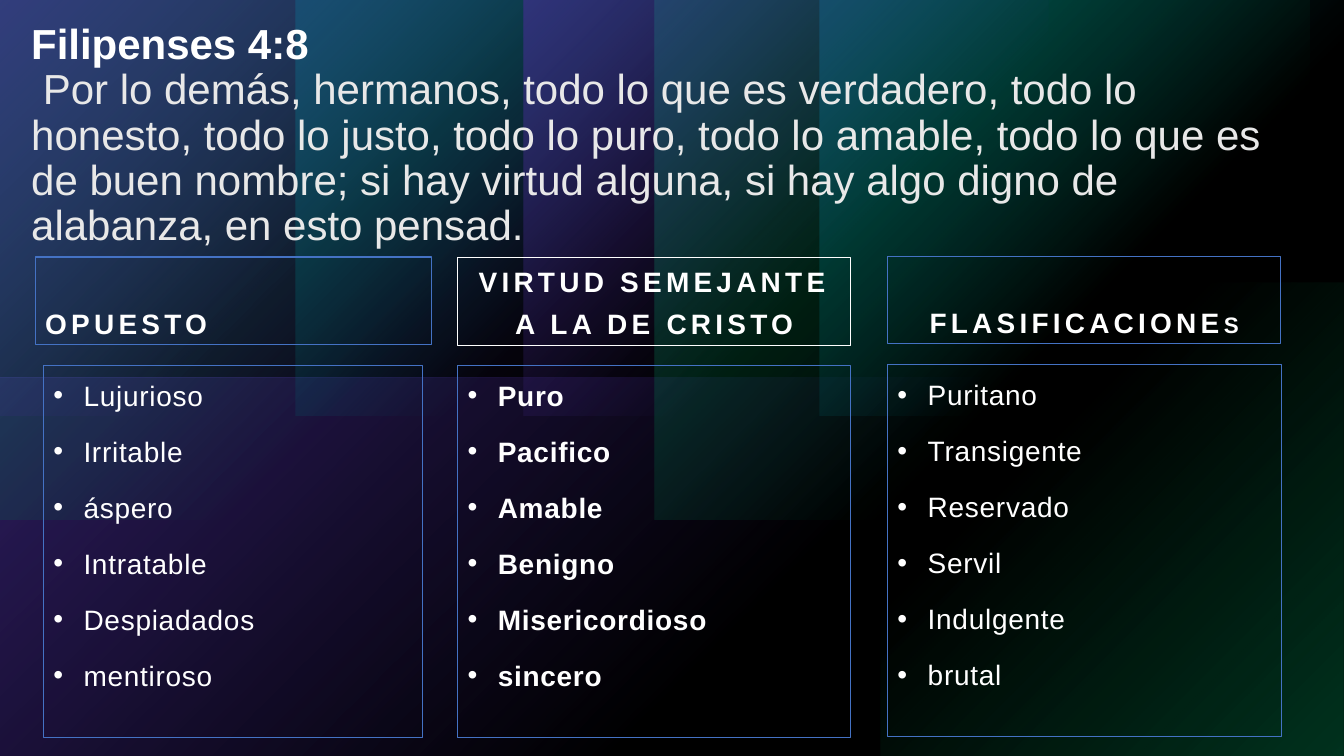
from copy import deepcopy
from lxml.etree import SubElement
from pptx import Presentation
from pptx.dml.color import RGBColor
from pptx.enum.shapes import MSO_SHAPE as Preset
from pptx.enum.text import MSO_ANCHOR as Anchor, MSO_AUTO_SIZE as AutoSize, PP_ALIGN as Align
from pptx.oxml import parse_xml
from pptx.oxml.ns import nsdecls, qn
from pptx.util import Pt

COLORS = {
    "black": "000000", "white": "FFFFFF", "verse": "E8E8E8", "blue": "4472C4",
    "green": "00D17D", "purple": "794DFF", "cyan": "00BAC8",
}
FONT = "Arial"
SLIDE_SIZE = (960, 540)

REFERENCE = "Filipenses 4:8"
VERSE = (" Por lo demás, hermanos, todo lo que es verdadero, todo lo honesto, todo lo justo, "
         "todo lo puro, todo lo amable, todo lo que es de buen nombre; si hay virtud alguna, "
         "si hay algo digno de alabanza, en esto pensad.")
TITLE_BOX = (15.1, 13, 899.3, 141.8)

COLUMNS = [
    {"heading": ["OPUESTO"], "heading_box": (25.2, 183.6, 283.2, 62.6), "align": Align.LEFT,
     "outline": ("blue", 1), "list_box": (31, 260.8, 270.7, 265.7), "bold": False,
     "items": ["Lujurioso", "Irritable", "áspero", "Intratable", "Despiadados", "mentiroso"]},
    {"heading": ["VIRTUD SEMEJANTE A LA DE CRISTO"], "heading_box": (326.9, 183.9, 280.8, 62.6),
     "align": Align.CENTER, "outline": ("white", 0.75),
     "list_box": (326.9, 260.8, 280.8, 265.7), "bold": True,
     "items": ["Puro", "Pacifico", "Amable", "Benigno", "Misericordioso", "sincero"]},
    {"heading": ["FLASIFICACIONE", "S"], "heading_box": (634, 183.1, 280.8, 62.6),
     "align": Align.CENTER, "outline": ("blue", 0.75),
     "list_box": (634, 260.4, 281.2, 265.7), "bold": False,
     "items": ["Puritano", "Transigente", "Reservado", "Servil", "Indulgente", "brutal"]},
]

TOP_LEFT = (0, 0, 100, 100)
BOTTOM_RIGHT = (100, 100, 0, 0)
CORNER_GLOW = [(0, 40), (34, 20), (65, 0)]
WIDE_GLOW = [(0, 60), (63, 0)]
GLOW = [(0, 60), (60, 0)]
GLOWS = [
    ((629.3, 201.6, 330.7, 338.4), "green", CORNER_GLOW, BOTTOM_RIGHT),
    ((0, 0, 901.4, 270), "purple", GLOW, TOP_LEFT),
    ((0, 270, 901.4, 270), "purple", GLOW, TOP_LEFT),
    ((0, 0, 468, 370.8), "green", WIDE_GLOW, TOP_LEFT),
    ((467.6, 0, 468, 370.8), "green", WIDE_GLOW, TOP_LEFT),
    ((585.4, 0, 374.4, 296.6), "cyan", GLOW, TOP_LEFT),
    ((211, 0, 374.4, 296.6), "cyan", GLOW, TOP_LEFT),
    ((374.4, 0, 374.4, 296.6), "purple", GLOW, TOP_LEFT),
    ((0, 0, 374.4, 296.6), "purple", GLOW, TOP_LEFT),
]
VEIL_OPACITY = 40


def color(name):
    return RGBColor.from_string(COLORS[name])


def add_rectangle(slide, box):
    shape = slide.shapes.add_shape(Preset.RECTANGLE, *map(Pt, box))
    shape.shadow.inherit = False
    shape.line.fill.background()
    return shape


def add_glow(slide, box, name, stops, focus):
    shape = add_rectangle(slide, box)
    stop_xml = "".join(
        f'<a:gs pos="{position * 1000}"><a:srgbClr val="{COLORS[name]}">'
        f'<a:alpha val="{opacity * 1000}"/></a:srgbClr></a:gs>' for position, opacity in stops)
    sides = " ".join(f'{side}="{value * 1000}"' for side, value in zip("ltrb", focus))
    gradient = parse_xml(
        f'<a:gradFill {nsdecls("a")} rotWithShape="1"><a:gsLst>{stop_xml}</a:gsLst>'
        f'<a:path path="circle"><a:fillToRect {sides}/></a:path></a:gradFill>')
    shape._element.spPr.find(qn("a:prstGeom")).addnext(gradient)


def add_veil(slide):
    shape = add_rectangle(slide, (0, 0, *SLIDE_SIZE))
    shape.fill.solid()
    shape.fill.fore_color.rgb = color("black")
    fill_color = shape._element.spPr.find(qn("a:solidFill"))[0]
    SubElement(fill_color, qn("a:alpha"), val=str(VEIL_OPACITY * 1000))


def format_run(run, size, bold, name="white", spacing=0):
    run.font.name = FONT
    run.font.size = Pt(size)
    run.font.bold = bold
    run.font.color.rgb = color(name)
    if spacing:
        run._r.get_or_add_rPr().set("spc", str(int(spacing * 100)))


def place_title(slide):
    title = slide.shapes.title
    slide.shapes._spTree.append(title._element)
    title.left, title.top, title.width, title.height = map(Pt, TITLE_BOX)
    frame = title.text_frame
    frame.text = f"{REFERENCE}\v{VERSE}"
    frame.word_wrap = True
    frame.auto_size = AutoSize.NONE
    frame.vertical_anchor = Anchor.TOP
    paragraph = frame.paragraphs[0]
    paragraph.alignment = Align.LEFT
    paragraph.line_spacing = 0.9
    reference, verse = paragraph.runs
    format_run(reference, 30, True)
    format_run(verse, 30, False, "verse")
    line_break = paragraph._p.find(qn("a:br"))
    line_break.insert(0, deepcopy(reference._r.rPr))


def add_outlined_text(slide, box, outline, anchor):
    shape = slide.shapes.add_textbox(*map(Pt, box))
    name, width = outline
    shape.line.color.rgb = color(name)
    shape.line.width = Pt(width)
    shape.text_frame.word_wrap = True
    shape.text_frame.vertical_anchor = anchor
    return shape.text_frame


def space_paragraph(paragraph):
    paragraph.line_spacing = 1.25
    paragraph.space_before = Pt(10)


def add_heading(slide, column):
    frame = add_outlined_text(slide, column["heading_box"], column["outline"], Anchor.BOTTOM)
    paragraph = frame.paragraphs[0]
    paragraph.alignment = column["align"]
    space_paragraph(paragraph)
    for text, size in zip(column["heading"], (20, 16)):
        run = paragraph.add_run()
        run.text = text
        format_run(run, size, True, spacing=3)


def add_list(slide, column):
    frame = add_outlined_text(slide, column["list_box"], ("blue", 0.75), Anchor.TOP)
    frame.text = "\n".join(column["items"])
    for paragraph in frame.paragraphs:
        space_paragraph(paragraph)
        properties = paragraph._p.get_or_add_pPr()
        properties.set("marL", str(Pt(21.6)))
        properties.set("indent", str(-Pt(21.6)))
        SubElement(properties, qn("a:buFont"), typeface=FONT)
        SubElement(properties, qn("a:buChar"), char="•")
        format_run(paragraph.runs[0], 20, column["bold"], spacing=0.5)


def main():
    presentation = Presentation()
    presentation.slide_width, presentation.slide_height = map(Pt, SLIDE_SIZE)
    slide = presentation.slides.add_slide(presentation.slide_layouts[5])
    slide.background.fill.solid()
    slide.background.fill.fore_color.rgb = color("black")
    for glow in GLOWS:
        add_glow(slide, *glow)
    add_veil(slide)
    place_title(slide)
    for column in COLUMNS:
        add_heading(slide, column)
        add_list(slide, column)
    presentation.save("out.pptx")


if __name__ == "__main__":
    main()
